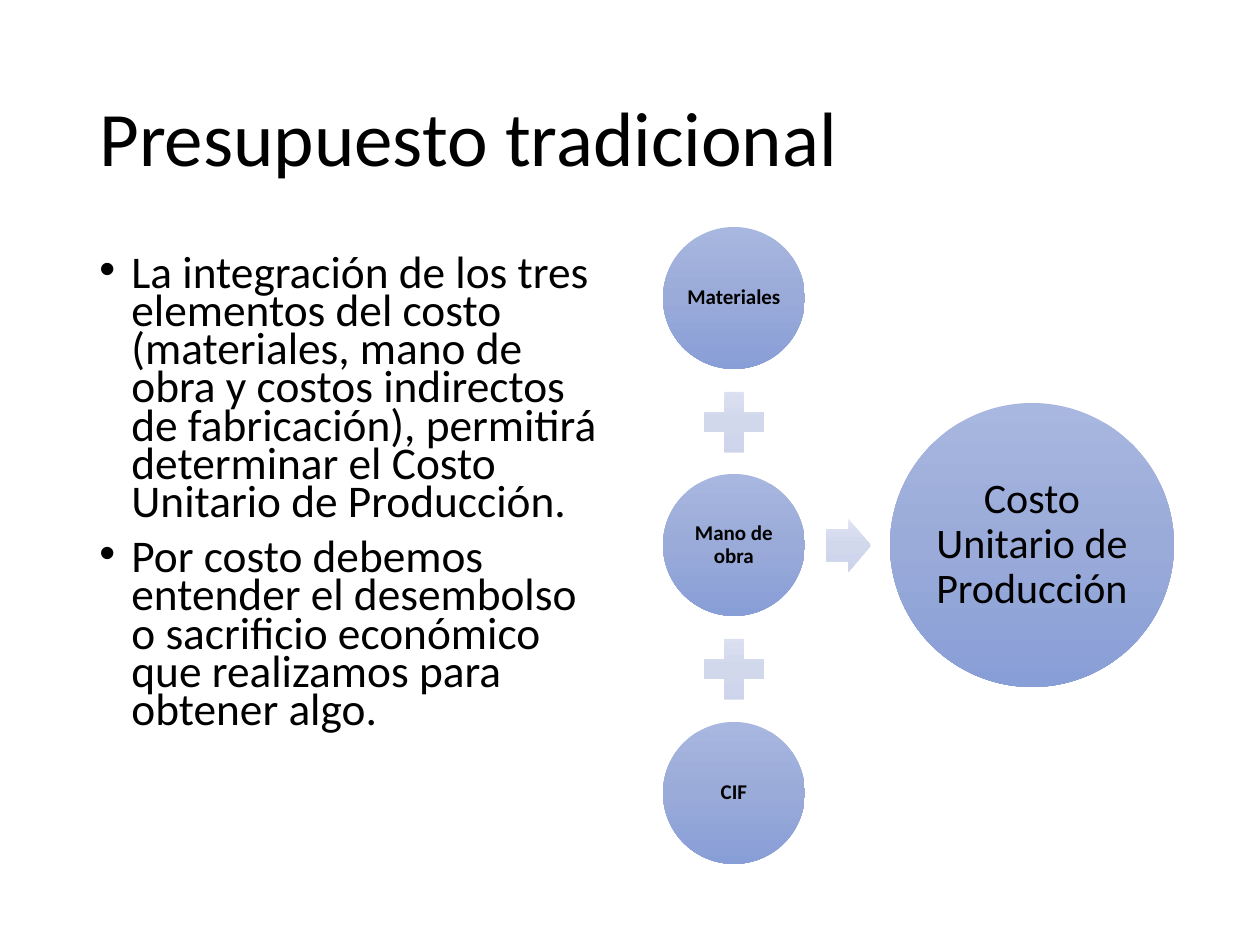
from copy import deepcopy

from lxml import etree
from pptx import Presentation
from pptx.dml.color import RGBColor
from pptx.enum.shapes import MSO_SHAPE
from pptx.enum.text import MSO_ANCHOR, PP_ALIGN
from pptx.oxml.ns import qn
from pptx.util import Pt

OVAL, PLUS, ARROW = MSO_SHAPE.OVAL, MSO_SHAPE.MATH_PLUS, MSO_SHAPE.RIGHT_ARROW
MIDDLE, CENTER = MSO_ANCHOR.MIDDLE, PP_ALIGN.CENTER
PX = 914400 // 126  # EMU in one px

THEME = {
    "font": "Calibri",
    "ink": "000000",
    "disc": ("A8B7DF", "9AABD9", "889ED7"),
    "sign": ("DEE3F2", "D2D8EC", "CCD3EB"),
    "title": 44, "body": 25.9, "part": 12, "total": 24,
}


def write(par, text, size, bold=False):
    run = par.add_run()
    run.text = text
    font = run.font
    font.name, font.size, font.bold = THEME["font"], Pt(THEME[size]), bold
    font.color.rgb = RGBColor.from_string(THEME["ink"])


def draw(kind, box, tones, text="", size="part", bold=False, inset=2):
    shape = group.shapes.add_shape(kind, *[n * PX for n in box])
    shape.shadow.inherit = False
    shape.line.fill.background()
    # Three-step gradient from top to bottom
    shape.fill.gradient()
    shape.fill.gradient_angle = 270
    stops = shape._element.spPr.find(qn("a:gradFill")).find(qn("a:gsLst"))
    stops.insert(1, deepcopy(stops[0]))
    for stop, tone, pos in zip(shape.fill.gradient_stops, THEME[tones], (0, 0.5, 1)):
        stop.color.rgb = RGBColor.from_string(tone)
        stop.position = pos
    if text:
        frame = shape.text_frame
        frame.word_wrap, frame.vertical_anchor = True, MIDDLE
        frame.margin_left = frame.margin_right = inset * PX
        frame.margin_top = frame.margin_bottom = inset * PX
        par = frame.paragraphs[0]
        par.alignment, par.line_spacing = CENTER, 0.9
        write(par, text, size, bold)
    return shape


deck = Presentation()
deck.slide_width, deck.slide_height = 1260 * PX, 945 * PX
slide = deck.slides.add_slide(deck.slide_layouts[6])

# Title
title = slide.shapes.add_textbox(87 * PX, 50 * PX, 1086 * PX, 183 * PX).text_frame
title.word_wrap, title.vertical_anchor = True, MIDDLE
title.paragraphs[0].line_spacing = 0.9
write(title.paragraphs[0], "Presupuesto tradicional", "title")

# Bulleted text
points = (
    "La integración de los tres elementos del costo (materiales, mano de obra "
    "y costos indirectos de fabricación), permitirá determinar el Costo "
    "Unitario de Producción.",
    "Por costo debemos entender el desembolso o sacrificio económico que "
    "realizamos para obtener algo.",
)
body = slide.shapes.add_textbox(87 * PX, 252 * PX, 536 * PX, 600 * PX).text_frame
body.word_wrap = True
for i, point in enumerate(points):
    par = body.add_paragraph() if i else body.paragraphs[0]
    par.line_spacing = 0.7
    if i:
        par.space_before = Pt(10)
    props = par._p.get_or_add_pPr()
    props.set("marL", str(32 * PX))
    props.set("indent", str(-32 * PX))
    etree.SubElement(props, qn("a:buFont")).set("typeface", "Arial")
    etree.SubElement(props, qn("a:buChar")).set("char", "•")
    write(par, point, "body")

# Cost parts joined by plus signs
group = slide.shapes.add_group_shape()
parts = ("Materiales", "Mano de obra", "CIF")
for i, part in enumerate(parts):
    drop = 495 * i // 2
    draw(OVAL, (663, 227 + drop, 142, 142), "disc", part, bold=True)
    if i < len(parts) - 1:
        draw(PLUS, (693, 381 + drop, 82, 82), "sign")

# Arrow to the total
arrow = draw(ARROW, (826, 519, 45, 53), "sign")
arrow.adjustments[0], arrow.adjustments[1] = 0.6, 0.5
draw(OVAL, (890, 403, 284, 284), "disc", "Costo Unitario de Producción", "total", inset=4)

deck.save("out.pptx")
